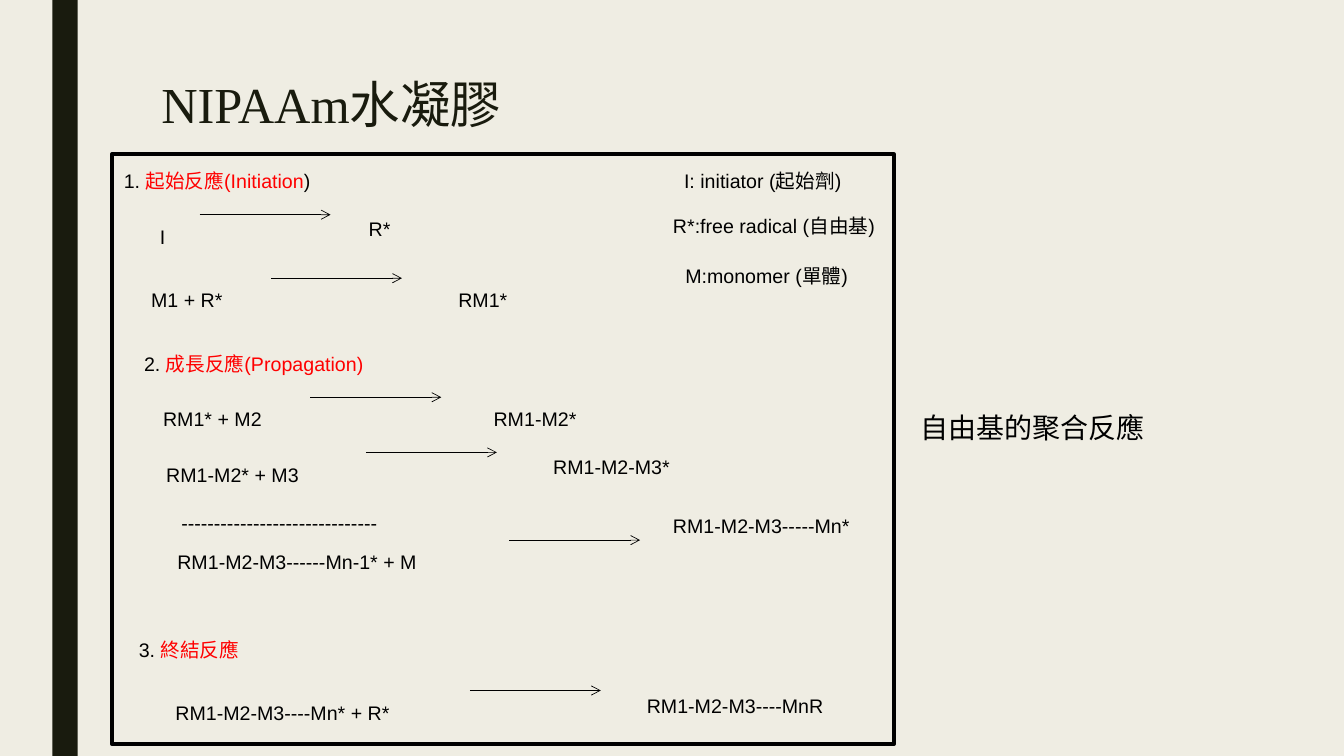
from dataclasses import dataclass

from lxml import etree
from pptx import Presentation
from pptx.dml.color import RGBColor
from pptx.enum.shapes import MSO_CONNECTOR, MSO_SHAPE
from pptx.enum.text import MSO_ANCHOR, MSO_AUTO_SIZE, PP_ALIGN
from pptx.oxml.ns import qn
from pptx.util import Cm, Pt

RECTANGLE = MSO_SHAPE.RECTANGLE
STRAIGHT = MSO_CONNECTOR.STRAIGHT
TOP = MSO_ANCHOR.TOP
LEFT = PP_ALIGN.LEFT
NO_AUTOFIT = MSO_AUTO_SIZE.NONE
TITLE_ONLY = 5


@dataclass(frozen=True)
class Theme:
    background: RGBColor = RGBColor(0xEF, 0xED, 0xE3)
    dark: RGBColor = RGBColor(0x19, 0x1B, 0x0E)
    ink: RGBColor = RGBColor(0, 0, 0)
    accent: RGBColor = RGBColor(0xFF, 0, 0)
    title_font: str = "Times New Roman"
    body_font: str = "Arial"
    note_font: str = "Noto Sans CJK SC"
    title_size: Pt = Pt(36)
    note_size: Pt = Pt(20)
    body_size: Pt = Pt(14)
    frame_line: Pt = Pt(2.75)
    arrow_line: Pt = Pt(0.5)


THEME = Theme()
ARROW_LENGTH = 3.3

STAGES = [
    (2.87, 4.14, 6.05, "1. ", "起始反應(Initiation", ")"),
    (3.38, 8.74, 7.01, "2. ", "成長反應(Propagation)", ""),
    (3.25, 15.95, 3.45, "3. ", "終結反應", ""),
]

LABELS = [
    (3.78, 5.54, 0.79, "I"),
    (9.04, 5.33, 1.3, "R*"),
    (3.56, 7.14, 2.59, "M1 + R*"),
    (11.3, 7.14, 1.93, "RM1*"),
    (3.86, 10.13, 3.61, "RM1* + M2"),
    (12.19, 10.13, 2.95, "RM1-M2*"),
    (3.94, 11.53, 4.42, "RM1-M2* + M3"),
    (13.69, 11.33, 3.96, "RM1-M2-M3*"),
    (4.32, 12.75, 6.35, "-" * 30),
    (4.22, 13.74, 7.62, "RM1-M2-M3------Mn-1* + M"),
    (16.71, 12.83, 6.5, "RM1-M2-M3-----Mn*"),
    (4.17, 17.55, 7.06, "RM1-M2-M3----Mn* + R*"),
    (16.05, 17.35, 5.72, "RM1-M2-M3----MnR"),
    (16.99, 4.14, 5.16, "I: initiator (起始劑)"),
    (16.71, 5.26, 7.11, "R*:free radical (自由基)"),
    (17.02, 6.53, 5.33, "M:monomer (單體)"),
]

ARROWS = [
    (5.03, 5.41),
    (6.83, 7.01),
    (7.82, 10.01),
    (9.22, 11.4),
    (12.83, 13.61),
    (11.84, 17.4),
]


def set_font(font, name, size, color=None):
    font.name = name
    font.size = size
    if color is not None:
        font.color.rgb = color


def add_title(s, text):
    sp = s.shapes.title
    sp.left, sp.top, sp.width, sp.height = Cm(3.81), Cm(1.9), Cm(26.67), Cm(4.11)
    tf = sp.text_frame
    tf.text = text
    tf.auto_size = NO_AUTOFIT
    tf.vertical_anchor = TOP
    p = tf.paragraphs[0]
    p.alignment = LEFT
    p.line_spacing = 0.89
    set_font(p.font, THEME.title_font, THEME.title_size, THEME.dark)


def add_text(s, left, top, width, runs, name=THEME.body_font, size=THEME.body_size):
    sp = s.shapes.add_textbox(Cm(left), Cm(top), Cm(width), Cm(0.86))
    tf = sp.text_frame
    tf.word_wrap = True
    p = tf.paragraphs[0]
    set_font(p.font, name, size)
    for text, color in runs:
        r = p.add_run()
        r.text = text
        r.font.color.rgb = color


def add_stage(s, left, top, width, number, heading, ending):
    runs = [(number, THEME.ink), (heading, THEME.accent)]
    if ending:
        runs.append((ending, THEME.ink))
    add_text(s, left, top, width, runs)


def add_rectangle(s, left, top, width, height):
    sp = s.shapes.add_shape(RECTANGLE, Cm(left), Cm(top), Cm(width), Cm(height))
    sp.shadow.inherit = False
    return sp


def add_bar(s):
    sp = add_rectangle(s, 1.32, 0, 0.64, 19.05)
    sp.fill.solid()
    sp.fill.fore_color.rgb = THEME.dark
    sp.line.fill.background()


def add_frame(s):
    sp = add_rectangle(s, 2.82, 3.89, 19.71, 14.86)
    sp.fill.background()
    sp.line.color.rgb = THEME.ink
    sp.line.width = THEME.frame_line


def add_arrow(s, left, top):
    arrow = s.shapes.add_connector(
        STRAIGHT, Cm(left), Cm(top), Cm(left + ARROW_LENGTH), Cm(top)
    )
    arrow.line.color.rgb = THEME.ink
    arrow.line.width = THEME.arrow_line
    ln = arrow.line._get_or_add_ln()
    etree.SubElement(ln, qn("a:tailEnd"), type="arrow")
    etree.SubElement(arrow._element.spPr, qn("a:effectLst"))


def main():
    prs = Presentation()
    prs.slide_width, prs.slide_height = Cm(33.87), Cm(19.05)
    s = prs.slides.add_slide(prs.slide_layouts[TITLE_ONLY])
    s.background.fill.solid()
    s.background.fill.fore_color.rgb = THEME.background

    add_bar(s)
    add_title(s, "NIPAAm水凝膠")
    for stage in STAGES:
        add_stage(s, *stage)
    for left, top, width, text in LABELS:
        add_text(s, left, top, width, [(text, THEME.ink)])
    for left, top in ARROWS:
        add_arrow(s, left, top)
    add_frame(s)
    add_text(
        s, 22.94, 10.21, 6.6, [("自由基的聚合反應", THEME.ink)],
        THEME.note_font, THEME.note_size,
    )
    prs.save("out.pptx")


if __name__ == "__main__":
    main()
